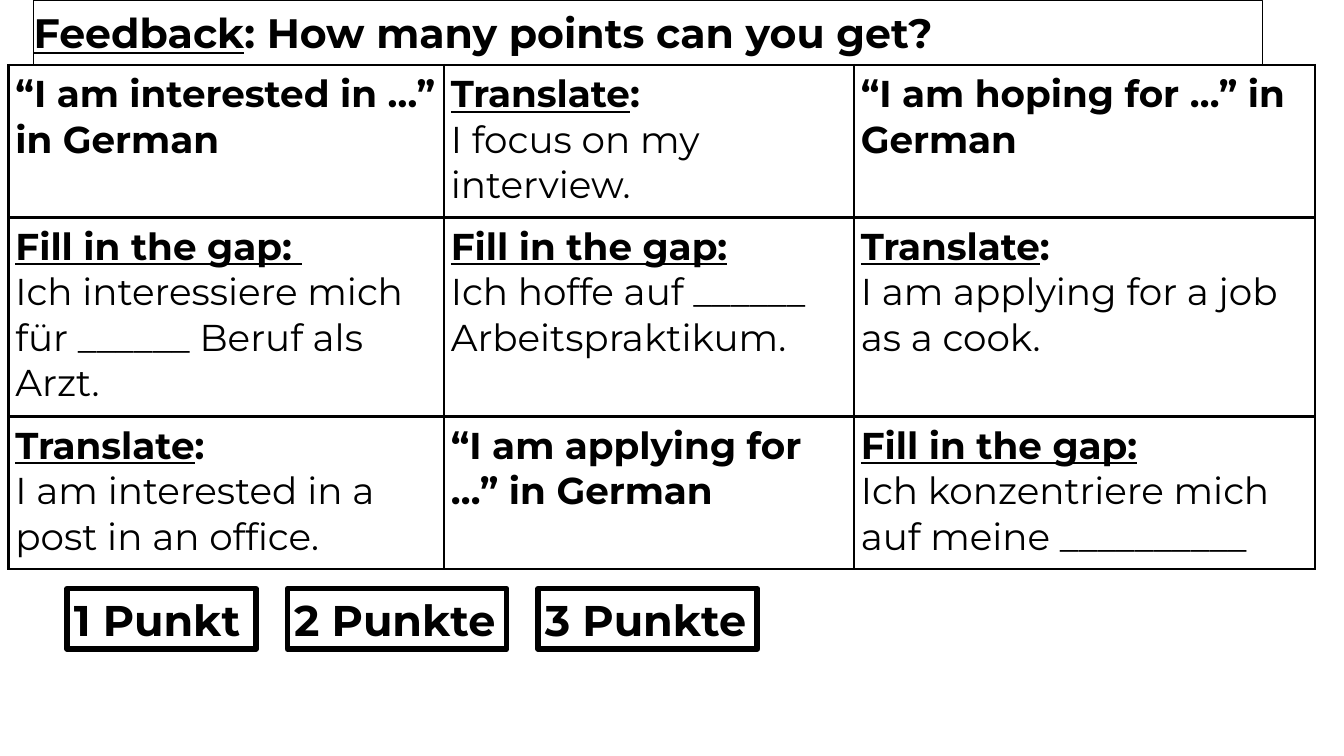
from lxml import etree
from pptx import Presentation
from pptx import util as u
from pptx.dml.color import RGBColor
from pptx.enum import shapes, text
from pptx.oxml.ns import qn

# Content: runs are (text, style), with b for bold and u for underlined
TITLE = [("Feedback", "bu"), (": How many points can you get?", "b")]


def question(wording):
    return [(wording, "b")]


def translate(sentence):
    return [("Translate", "bu"), (":\n", "b"), (sentence, "")]


def fill_gap(sentence, heading="Fill in the gap:"):
    return [(heading + "\n", "bu"), (sentence, "")]


TASKS = [
    [question("“I am interested in …” in German"),
     translate("I focus on my interview."),
     question("“I am hoping for …” in German")],
    [fill_gap("Ich interessiere mich für ______ Beruf als Arzt.", "Fill in the gap: "),
     fill_gap("Ich hoffe auf ______\nArbeitspraktikum."),
     translate("I am applying for a job as a cook.")],
    [translate("I am interested in a post in an office."),
     question("“I am applying for …” in German"),
     fill_gap("Ich konzentriere mich auf meine __________")],
]
SCORES = [("1 Punkt", 2.81), ("2 Punkte", 3.26), ("3 Punkte", 3.26)]  # label, width

# Layout in inches
SLIDE = (20, 11.25)
TITLE_BOX = (0.5, 0, 18.29, 1.78)
TABLE_ORIGIN = (0.13, 0.97)
COLUMNS = (6.48, 6.1, 6.86)
ROWS = (2.27, 2.96, 2.27)
SCORE_LEFT, SCORE_TOP, SCORE_HEIGHT, SCORE_GAP = 1, 8.76, 0.9, 0.47
INSET = 0.1

THEME = {
    "font": "Montserrat",
    "ink": RGBColor(0, 0, 0),
    "paper": RGBColor(255, 255, 255),
    "title": 44, "task": 40, "score": 46,
    "title_line": 0.75, "grid_line": 3, "score_line": 6,
}


def inches(*values):
    return [u.Inches(value) for value in values]


def write(frame, runs, size, spacing=None):
    """Fill the first paragraph of a frame with styled runs."""
    paragraph = frame.paragraphs[0]
    paragraph.alignment = text.PP_ALIGN.LEFT
    if spacing:
        paragraph.line_spacing = spacing
    for wording, style in runs:
        for index, part in enumerate(wording.split("\n")):
            if index:
                paragraph.add_line_break()
            if not part:
                continue
            run = paragraph.add_run()
            run.text = part
            run.font.name, run.font.size = THEME["font"], u.Pt(size)
            run.font.bold, run.font.underline = "b" in style, "u" in style
            run.font.color.rgb = THEME["ink"]


def set_margins(target, inset):
    target.margin_left = target.margin_right = u.Inches(inset)
    target.margin_top = target.margin_bottom = u.Inches(inset)


def add_box(slide, box, runs, size, line, inset, anchor, filled=True, spacing=None):
    shape = slide.shapes.add_shape(shapes.MSO_SHAPE.RECTANGLE, *inches(*box))
    shape.shadow.inherit = False
    if filled:
        shape.fill.solid()
        shape.fill.fore_color.rgb = THEME["paper"]
    else:
        shape.fill.background()
    shape.line.color.rgb = THEME["ink"]
    shape.line.width = u.Pt(line)
    frame = shape.text_frame
    frame.word_wrap = True
    frame.vertical_anchor = anchor
    set_margins(frame, inset)
    write(frame, runs, size, spacing)


def add_borders(cell):
    properties = cell._tc.get_or_add_tcPr()
    for position, side in enumerate(("lnL", "lnR", "lnT", "lnB")):
        line = etree.Element(qn("a:" + side), w=str(u.Pt(THEME["grid_line"])))
        fill = etree.SubElement(line, qn("a:solidFill"))
        etree.SubElement(fill, qn("a:srgbClr"), val=str(THEME["ink"]))
        properties.insert(position, line)


def add_task_table(slide):
    frame = slide.shapes.add_table(len(ROWS), len(COLUMNS), *inches(
        *TABLE_ORIGIN, sum(COLUMNS), sum(ROWS)))
    table = frame.table
    for column, width in zip(table.columns, COLUMNS):
        column.width = u.Inches(width)
    for row, height, tasks in zip(table.rows, ROWS, TASKS):
        row.height = u.Inches(height)
        for cell, runs in zip(row.cells, tasks):
            cell.fill.solid()
            cell.fill.fore_color.rgb = THEME["paper"]
            set_margins(cell, INSET)
            add_borders(cell)
            write(cell.text_frame, runs, THEME["task"])


def main():
    presentation = Presentation()
    presentation.slide_width, presentation.slide_height = inches(*SLIDE)
    slide = presentation.slides.add_slide(presentation.slide_layouts[6])

    # Heading
    add_box(slide, TITLE_BOX, TITLE, THEME["title"], THEME["title_line"], 0,
            text.MSO_ANCHOR.TOP, filled=False, spacing=1.15)

    # Score labels, left to right with equal gaps
    left = SCORE_LEFT
    for label, width in SCORES:
        add_box(slide, (left, SCORE_TOP, width, SCORE_HEIGHT), [(label, "b")],
                THEME["score"], THEME["score_line"], INSET, text.MSO_ANCHOR.MIDDLE)
        left += width + SCORE_GAP

    # Task grid
    add_task_table(slide)
    presentation.save("out.pptx")


if __name__ == "__main__":
    main()
